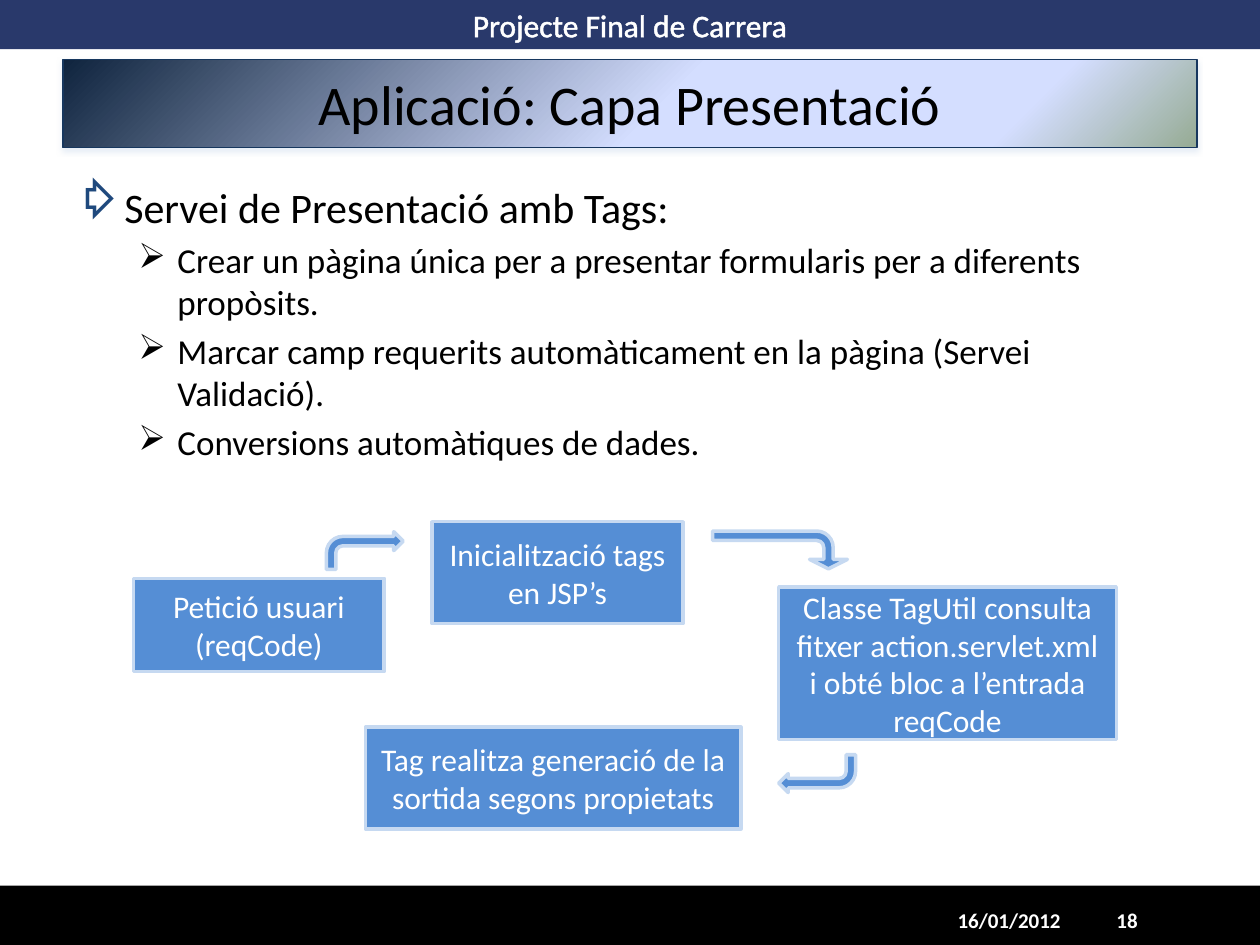
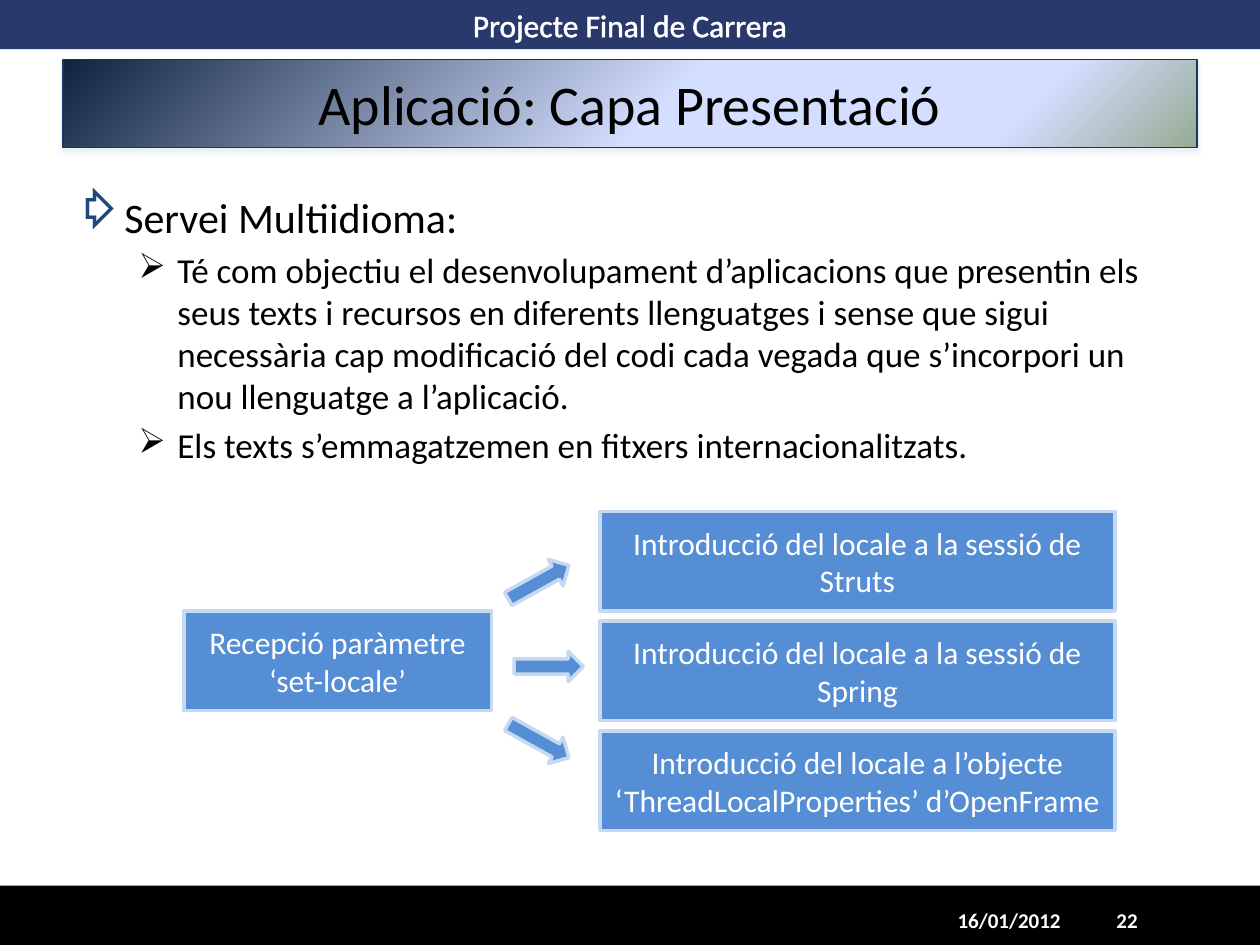
"""Build two slides on the presentation layer: tag service and multilanguage service."""
import dataclasses

import lxml.etree
import pptx
import pptx.dml.color
import pptx.enum.shapes
import pptx.enum.text
import pptx.oxml.ns
import pptx.util

Inches, Pt = pptx.util.Inches, pptx.util.Pt
RGBColor = pptx.dml.color.RGBColor
SHAPE = pptx.enum.shapes.MSO_SHAPE
qn = pptx.oxml.ns.qn


@dataclasses.dataclass(frozen=True)
class Theme:
    font: str = "Calibri"
    band: str = "29396B"
    footer: str = "000000"
    title_line: str = "17375E"
    title_stops: tuple = ((0, "0F243E"), (53, "D4DEFF"), (83, "D4DEFF"), (100, "96AB94"))
    title_shadow: str = "B9CDE5"
    node: str = "558ED5"
    node_line: str = "C6D9F1"
    dark: str = "000000"
    light: str = "FFFFFF"
    bullet: str = "1F497D"
    title_size: int = 32
    heading_size: int = 24
    point_size: int = 20
    label_size: int = 18
    footer_size: int = 12


THEME = Theme()


def add_block(slide, kind, box, fill, line=None, line_width=2):
    block = slide.shapes.add_shape(kind, *map(Inches, box))
    block.shadow.inherit = False
    block.fill.solid()
    block.fill.fore_color.rgb = RGBColor.from_string(fill)
    if line:
        block.line.color.rgb = RGBColor.from_string(line)
        block.line.width = Pt(line_width)
    else:
        block.line.fill.background()
    return block


def write_centred(shape, text, size, color, bold=False):
    frame = shape.text_frame
    frame.text = text
    frame.word_wrap = True
    frame.vertical_anchor = pptx.enum.text.MSO_ANCHOR.MIDDLE
    for paragraph in frame.paragraphs:
        paragraph.alignment = pptx.enum.text.PP_ALIGN.CENTER
        for run in paragraph.runs:
            run.font.name = THEME.font
            run.font.size = Pt(size)
            run.font.bold = bold
            run.font.color.rgb = RGBColor.from_string(color)


locale_targets = [
    "Introducció del locale a la sessió de Struts",
    "Introducció del locale a la sessió de Spring",
    "Introducció del locale a l’objecte ‘ThreadLocalProperties’ d’OpenFrame",
]

pages = [
    {
        "number": "18",
        "body_top": 1.39,
        "heading": "Servei de Presentació amb Tags:",
        "points": [
            "Crear un pàgina única per a presentar formularis per a diferents propòsits.",
            "Marcar camp requerits automàticament en la pàgina (Servei Validació).",
            "Conversions automàtiques de dades.",
        ],
        "nodes": [
            ((1.06, 4.59, 1.99, 0.74), "Petició usuari\n(reqCode)"),
            ((3.43, 4.14, 1.99, 0.81), "Inicialització tags en JSP’s"),
            ((6.18, 4.66, 2.68, 1.21),
             "Classe TagUtil consulta fitxer action.servlet.xml i obté bloc a l’entrada reqCode"),
            ((2.9, 5.77, 2.98, 0.81), "Tag realitza generació de la sortida segons propietats"),
        ],
        "arrow_kind": SHAPE.BENT_ARROW,
        "arrows": [
            ((2.59, 4.22, 0.61, 0.3), 0, 0.25),
            ((6.04, 3.83, 0.3, 1.07), 90, 0.5),
            ((6.18, 5.99, 0.61, 0.3), 180, 0.25),
        ],
    },
    {
        "number": "22",
        "body_top": 1.47,
        "heading": "Servei Multiidioma:",
        "points": [
            "Té com objectiu el desenvolupament d’aplicacions que presentin els seus texts "
            "i recursos en diferents llenguatges i sense que sigui necessària cap modificació "
            "del codi cada vegada que s’incorpori un nou llenguatge a l’aplicació.",
            "Els texts s’emmagatzemen en fitxers internacionalitzats.",
        ],
        "nodes": [((1.46, 4.85, 2.44, 0.79), "Recepció paràmetre ‘set-locale’")]
        + [((4.76, 4.06 + 0.87 * row, 4.09, 0.79), target)
           for row, target in enumerate(locale_targets)],
        "arrow_kind": SHAPE.RIGHT_ARROW,
        "arrows": [
            ((4, 5.76, 0.55, 0.24), 29, 0.5),
            ((4, 4.5, 0.55, 0.24), -29, 0.5),
            ((4.08, 5.17, 0.55, 0.24), 0, 0.5),
        ],
    },
]

deck = pptx.Presentation()
deck.slide_width, deck.slide_height = Inches(10), Inches(7.5)

for page in pages:
    slide = deck.slides.add_slide(deck.slide_layouts[6])

    header = add_block(slide, SHAPE.RECTANGLE, (0, 0, 10, 0.39), THEME.band)
    write_centred(header, "Projecte Final de Carrera", THEME.label_size, THEME.light)
    header_run = header.text_frame.paragraphs[0].runs[0]
    outline = lxml.etree.Element(qn("a:ln"), w=str(Pt(1.45)))
    outline_fill = lxml.etree.SubElement(outline, qn("a:solidFill"))
    lxml.etree.SubElement(outline_fill, qn("a:srgbClr"), val=THEME.light)
    header_run.font._element.insert(0, outline)

    add_block(slide, SHAPE.RECTANGLE, (0, 7.03, 10, 0.47), THEME.footer)

    title = add_block(slide, SHAPE.RECTANGLE, (0.5, 0.47, 9, 0.7), THEME.light,
                      THEME.title_line, 0.75)
    write_centred(title, "Aplicació: Capa Presentació", THEME.title_size, THEME.dark)
    title.fill.gradient()
    title.fill.gradient_angle = 315
    stops = title._element.spPr.find(qn("a:gradFill")).find(qn("a:gsLst"))
    for stop in list(stops):
        stops.remove(stop)
    for position, color in THEME.title_stops:
        stop = lxml.etree.SubElement(stops, qn("a:gs"), pos=str(position * 1000))
        lxml.etree.SubElement(stop, qn("a:srgbClr"), val=color)
    shadow = lxml.etree.SubElement(
        title._element.spPr.find(qn("a:effectLst")), qn("a:outerShdw"),
        blurRad=str(Pt(3.1)), dist=str(Pt(1.8)), dir="5400000", rotWithShape="0")
    shadow_color = lxml.etree.SubElement(shadow, qn("a:srgbClr"), val=THEME.title_shadow)
    lxml.etree.SubElement(shadow_color, qn("a:alpha"), val="35000")

    body = slide.shapes.add_textbox(
        Inches(0.5), Inches(page["body_top"]), Inches(9), Inches(6.74 - page["body_top"]))
    body.text_frame.text = "\n".join([page["heading"], *page["points"]])
    body.text_frame.word_wrap = True
    for index, paragraph in enumerate(body.text_frame.paragraphs):
        is_heading = index == 0
        margin, hanging, mark, mark_color, size = (
            (0.38, 0.38, "⇨", THEME.bullet, THEME.heading_size) if is_heading
            else (0.81, 0.31, "➢", THEME.dark, THEME.point_size))
        properties = paragraph._p.get_or_add_pPr()
        properties.set("marL", str(Inches(margin)))
        properties.set("indent", str(-Inches(hanging)))
        bullet_color = lxml.etree.SubElement(properties, qn("a:buClr"))
        lxml.etree.SubElement(bullet_color, qn("a:srgbClr"), val=mark_color)
        lxml.etree.SubElement(properties, qn("a:buChar"), char=mark)
        if not is_heading:
            paragraph.level = 1
            paragraph.space_before = Pt(4)
        for run in paragraph.runs:
            run.font.name = THEME.font
            run.font.size = Pt(size)
            run.font.color.rgb = RGBColor.from_string(THEME.dark)

    for left, width, text in ((7.43, 1.16, "16/01/2012"), (8.67, 0.55, page["number"])):
        footer_note = slide.shapes.add_textbox(*map(Inches, (left, 7.1, width, 0.4)))
        write_centred(footer_note, text, THEME.footer_size, THEME.light, bold=True)

    for box, label in page["nodes"]:
        node = add_block(slide, SHAPE.RECTANGLE, box, THEME.node, THEME.node_line)
        write_centred(node, label, THEME.label_size, THEME.light)

    for box, rotation, head_size in page["arrows"]:
        arrow = add_block(slide, page["arrow_kind"], box, THEME.node, THEME.node_line)
        arrow.rotation = rotation
        arrow.adjustments[1] = head_size

deck.save("out.pptx")
